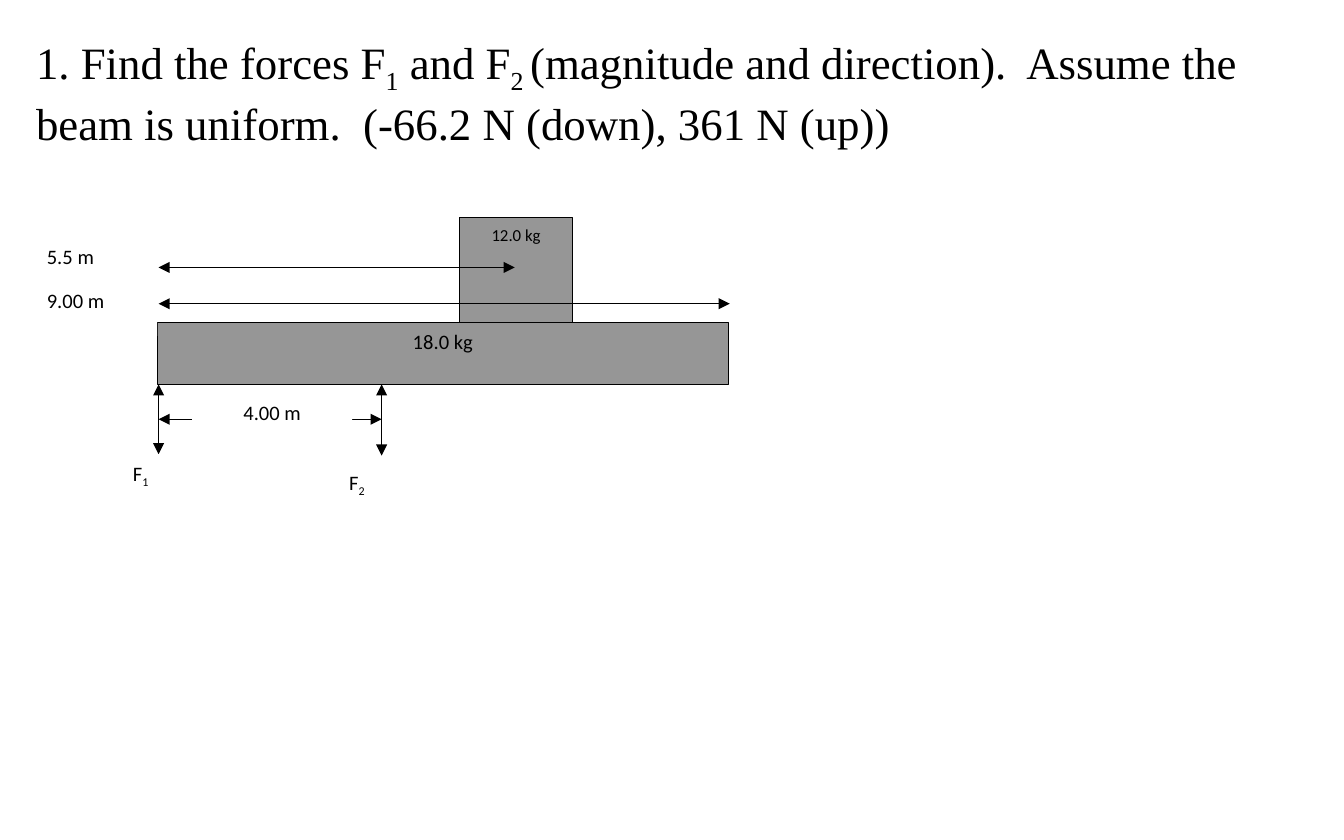
from dataclasses import dataclass

from lxml.etree import SubElement
from pptx import Presentation
from pptx.dml.color import RGBColor
from pptx.enum.shapes import MSO_CONNECTOR, MSO_SHAPE
from pptx.enum.text import MSO_ANCHOR, MSO_AUTO_SIZE, PP_ALIGN
from pptx.oxml.ns import qn
from pptx.util import Inches, Pt


@dataclass(frozen=True)
class Theme:
    ink: RGBColor = RGBColor(0x00, 0x00, 0x00)
    paper: RGBColor = RGBColor(0xFF, 0xFF, 0xFF)
    body: RGBColor = RGBColor(0x96, 0x96, 0x96)
    question_font: str = "Times New Roman"
    label_font: str = "Calibri"
    question_size: int = 24
    label_size: int = 11
    small_size: int = 9
    line_width: float = 0.75
    label_gap: int = 10


class Diagram:
    def __init__(self, slide, theme):
        self.slide = slide
        self.theme = theme

    def fill_paragraph(self, paragraph, parts, font, size):
        """Add text parts to a paragraph; every second part is a subscript."""
        paragraph.font.name = font
        paragraph.font.size = Pt(size)
        paragraph.font.color.rgb = self.theme.ink
        for index, part in enumerate(parts):
            run = paragraph.add_run()
            run.text = part
            if index % 2:
                run._r.get_or_add_rPr().set("baseline", "-25000")

    def question(self, left, top, width, height, parts):
        box = self.slide.shapes.add_textbox(
            Inches(left), Inches(top), Inches(width), Inches(height))
        frame = box.text_frame
        frame.word_wrap = True
        frame.auto_size = MSO_AUTO_SIZE.SHAPE_TO_FIT_TEXT
        self.fill_paragraph(frame.paragraphs[0], parts,
                            self.theme.question_font, self.theme.question_size)

    def rectangle(self, left, top, width, height, rows, fill, align, size):
        box = self.slide.shapes.add_shape(
            MSO_SHAPE.RECTANGLE,
            Inches(left), Inches(top), Inches(width), Inches(height))
        box.shadow.inherit = False
        box.fill.solid()
        box.fill.fore_color.rgb = fill
        box.line.fill.background()
        frame = box.text_frame
        frame.word_wrap = True
        frame.vertical_anchor = MSO_ANCHOR.TOP
        for index, parts in enumerate(rows):
            paragraph = frame.add_paragraph() if index else frame.paragraphs[0]
            paragraph.alignment = align
            paragraph.space_after = Pt(self.theme.label_gap)
            self.fill_paragraph(paragraph, parts, self.theme.label_font, size)
        return box

    def mass(self, left, top, width, height, text, size):
        body = self.rectangle(left, top, width, height, [[text]],
                              self.theme.body, PP_ALIGN.CENTER, size)
        body.line.color.rgb = self.theme.ink
        body.line.width = Pt(self.theme.line_width)

    def label(self, left, top, width, height, rows, align=PP_ALIGN.LEFT):
        self.rectangle(left, top, width, height, rows,
                       self.theme.paper, align, self.theme.label_size)

    def double_arrow(self, x1, y1, x2, y2):
        arrow = self.slide.shapes.add_connector(
            MSO_CONNECTOR.STRAIGHT,
            Inches(x1), Inches(y1), Inches(x2), Inches(y2))
        arrow.line.color.rgb = self.theme.ink
        arrow.line.width = Pt(self.theme.line_width)
        outline = arrow.line._get_or_add_ln()
        for end in ("a:headEnd", "a:tailEnd"):
            SubElement(outline, qn(end)).set("type", "triangle")
        SubElement(arrow._element.spPr, qn("a:effectLst"))


def main():
    presentation = Presentation()
    presentation.slide_width = Inches(10)
    presentation.slide_height = Inches(6.25)
    slide = presentation.slides.add_slide(presentation.slide_layouts[6])
    theme = Theme()
    diagram = Diagram(slide, theme)

    beam_left, beam_top, beam_width, beam_height = 1.17, 2.4, 4.25, 0.46
    beam_bottom = beam_top + beam_height
    block_height = 0.78
    force_1_x, force_2_x = 1.18, 2.84
    block_center, beam_end = 3.83, 5.43

    diagram.question(0.17, 0.21, 9.67, 0.91, [
        "1. Find the forces F", "1", " and F", "2 ",
        "(magnitude and direction).  Assume the beam is uniform.  "
        "(-66.2 N (down), 361 N (up))"])

    diagram.mass(beam_left, beam_top, beam_width, beam_height,
                 "18.0 kg", theme.label_size)
    diagram.mass(3.42, beam_top - block_height, 0.84, block_height,
                 "12.0 kg", theme.small_size)

    diagram.double_arrow(force_1_x, 3.38, force_1_x, beam_bottom)
    diagram.double_arrow(force_2_x, 3.39, force_2_x, beam_bottom)
    diagram.label(2.5, 3.45, 0.6, 0.4, [["F", "2"]])
    diagram.label(0.89, 3.38, 0.6, 0.44, [["F", "1"]])

    for distance_end, distance_y in ((block_center, 1.99), (beam_end, 2.26)):
        diagram.double_arrow(force_1_x, distance_y, distance_end, distance_y)
    diagram.label(0.25, 1.77, 0.92, 0.73, [["5.5 m"], ["9.00 m"]])

    diagram.double_arrow(force_1_x, 3.12, force_2_x, 3.12)
    diagram.label(1.43, 2.93, 1.19, 0.41, [["4.00 m"]], PP_ALIGN.CENTER)

    presentation.save("out.pptx")


if __name__ == "__main__":
    main()
